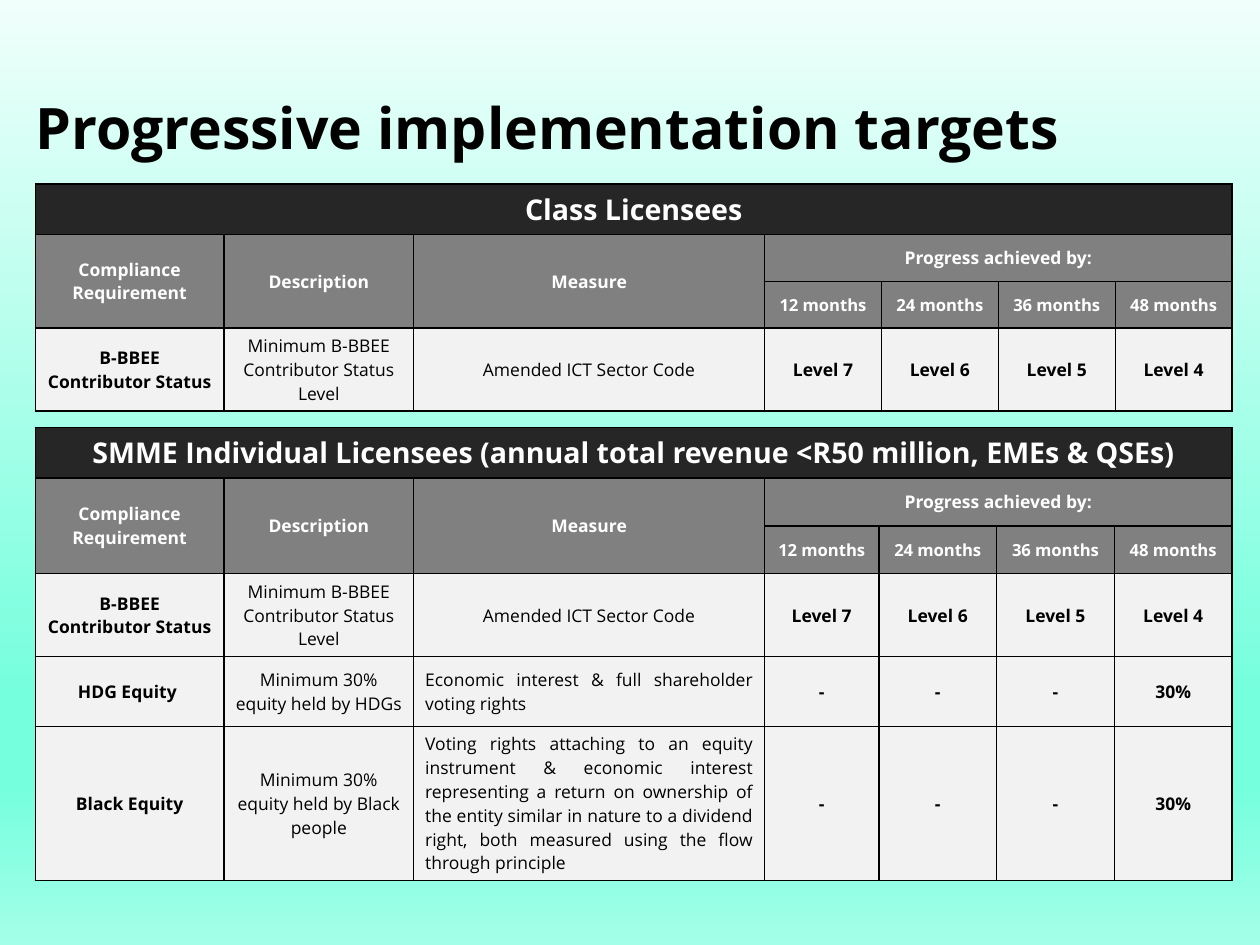
import copy

import pptx
import pptx.dml.color
import pptx.enum.text
import pptx.oxml
import pptx.oxml.ns
import pptx.util
from pptx.util import Inches

FONT = "Open Sans"
CM_PER_INCH = 2.54
COLORS = {
    "black": "000000",
    "white": "FFFFFF",
    "banner": "262626",
    "header": "808080",
    "body": "F2F2F2",
    "mist": "F0FFFB",
    "aqua": "75FFDD",
    "mint": "A3FFE8",
}
BACKGROUND_STOPS = [(0, "mist"), (0.74, "aqua"), (0.83, "aqua"), (1, "mint")]

HEADINGS = ["Compliance Requirement", "Description", "Measure", "Progress achieved by:"]
MONTHS = ["12 months", "24 months", "36 months", "48 months"]
STATUS = ["B-BBEE Contributor Status", "Minimum B-BBEE Contributor Status Level",
          "Amended ICT Sector Code", "Level 7", "Level 6", "Level 5", "Level 4"]
HDG_EQUITY = ["HDG Equity ", "Minimum 30% equity held by HDGs",
              "Economic interest & full shareholder voting rights", "-", "-", "-", "30%"]
BLACK_EQUITY = ["Black Equity", "Minimum 30% equity held by Black people",
                "Voting rights attaching to an equity instrument & economic interest "
                "representing a return on ownership of the entity similar in nature to a "
                "dividend right, both measured using the flow through principle",
                "-", "-", "-", "30%"]

CENTER = pptx.enum.text.PP_ALIGN.CENTER
JUSTIFY = pptx.enum.text.PP_ALIGN.JUSTIFY
MIDDLE = pptx.enum.text.MSO_ANCHOR.MIDDLE


def rgb(name):
    return pptx.dml.color.RGBColor.from_string(COLORS[name])


def set_font(paragraph, size, color, bold=True):
    font = paragraph.font
    font.name = FONT
    font.size = pptx.util.Pt(size)
    font.bold = bold
    font.color.rgb = rgb(color)


def paint_background(slide):
    fill = slide.background.fill
    fill.gradient()
    fill.gradient_angle = 270
    stop_list = slide.element.find(".//" + pptx.oxml.ns.qn("a:gsLst"))
    while len(stop_list) < len(BACKGROUND_STOPS):
        stop_list.append(copy.deepcopy(stop_list[0]))
    for stop, (position, color) in zip(fill.gradient_stops, BACKGROUND_STOPS):
        stop.position = position
        stop.color.rgb = rgb(color)


def add_title(slide, text):
    title = slide.shapes.title
    title.left, title.top = Inches(0.31), Inches(0.45)
    title.width, title.height = Inches(9.92), Inches(1.38)
    frame = title.text_frame
    frame.text = text
    frame.word_wrap = True
    frame.auto_size = pptx.enum.text.MSO_AUTO_SIZE.NONE
    frame.vertical_anchor = MIDDLE
    frame.margin_left = frame.margin_top = frame.margin_right = frame.margin_bottom = 0
    paragraph = frame.paragraphs[0]
    paragraph.alignment = JUSTIFY
    paragraph.line_spacing = 0.93
    set_font(paragraph, 36, "black")


def add_borders(cell):
    properties = cell._tc.get_or_add_tcPr()
    for side in ("lnL", "lnR", "lnT", "lnB"):
        properties.append(pptx.oxml.parse_xml(
            f'<a:{side} {pptx.oxml.ns.nsdecls("a")} w="12700"><a:solidFill>'
            f'<a:srgbClr val="{COLORS["black"]}"/></a:solidFill></a:{side}>'))


def format_cell(cell, text, fill, size, color, bold=True, alignment=CENTER):
    add_borders(cell)
    cell.fill.solid()
    cell.fill.fore_color.rgb = rgb(fill)
    cell.vertical_anchor = MIDDLE
    cell.text = text
    paragraph = cell.text_frame.paragraphs[0]
    paragraph.alignment = alignment
    set_font(paragraph, size, color, bold)


def add_target_table(slide, top, banner, month_widths, row_heights, targets):
    """Add a banner row, two header rows and one row for each target."""
    widths = [1.65, 1.66, 3.07] + month_widths
    frame = slide.shapes.add_table(
        len(row_heights), len(widths), Inches(0.31), Inches(top),
        Inches(sum(widths)), Inches(sum(row_heights)))
    table = frame.table
    table.first_row = table.horz_banding = False
    for column, width in zip(table.columns, widths):
        column.width = Inches(width)
    for row, height in zip(table.rows, row_heights):
        row.height = Inches(height)

    blanks = [""] * 3
    for column, text in enumerate([banner] + blanks * 2):
        format_cell(table.cell(0, column), text, "banner", 18, "white")
    for column, text in enumerate(HEADINGS + blanks):
        format_cell(table.cell(1, column), text, "header", 11, "white")
    for column, text in enumerate(blanks + MONTHS):
        format_cell(table.cell(2, column), text, "header", 10.5, "white")
    for row, target in enumerate(targets, start=3):
        for column, text in enumerate(target):
            justified = column == 2 and target is not STATUS
            format_cell(table.cell(row, column), text, "body", 11, "black",
                        bold=column not in (1, 2),
                        alignment=JUSTIFY if justified else CENTER)

    table.cell(0, 0).merge(table.cell(0, 6))
    table.cell(1, 3).merge(table.cell(1, 6))
    for column in range(3):
        table.cell(1, column).merge(table.cell(2, column))


def main():
    presentation = pptx.Presentation()
    presentation.slide_width = Inches(28 / CM_PER_INCH)
    presentation.slide_height = Inches(21 / CM_PER_INCH)
    slide = presentation.slides.add_slide(presentation.slide_layouts[5])
    paint_background(slide)
    add_title(slide, "Progressive implementation targets")
    add_target_table(slide, 1.61, "Class Licensees", [4.09 / 4] * 4,
                     [0.44, 0.41, 0.41, 0.72], [STATUS])
    add_target_table(
        slide, 3.74,
        "SMME Individual Licensees (annual total revenue <R50 million, EMEs & QSEs)",
        [1] + [1.03] * 3, [0.44, 0.42, 0.42, 0.72, 0.61, 1.35],
        [STATUS, HDG_EQUITY, BLACK_EQUITY])
    presentation.save("out.pptx")


if __name__ == "__main__":
    main()
